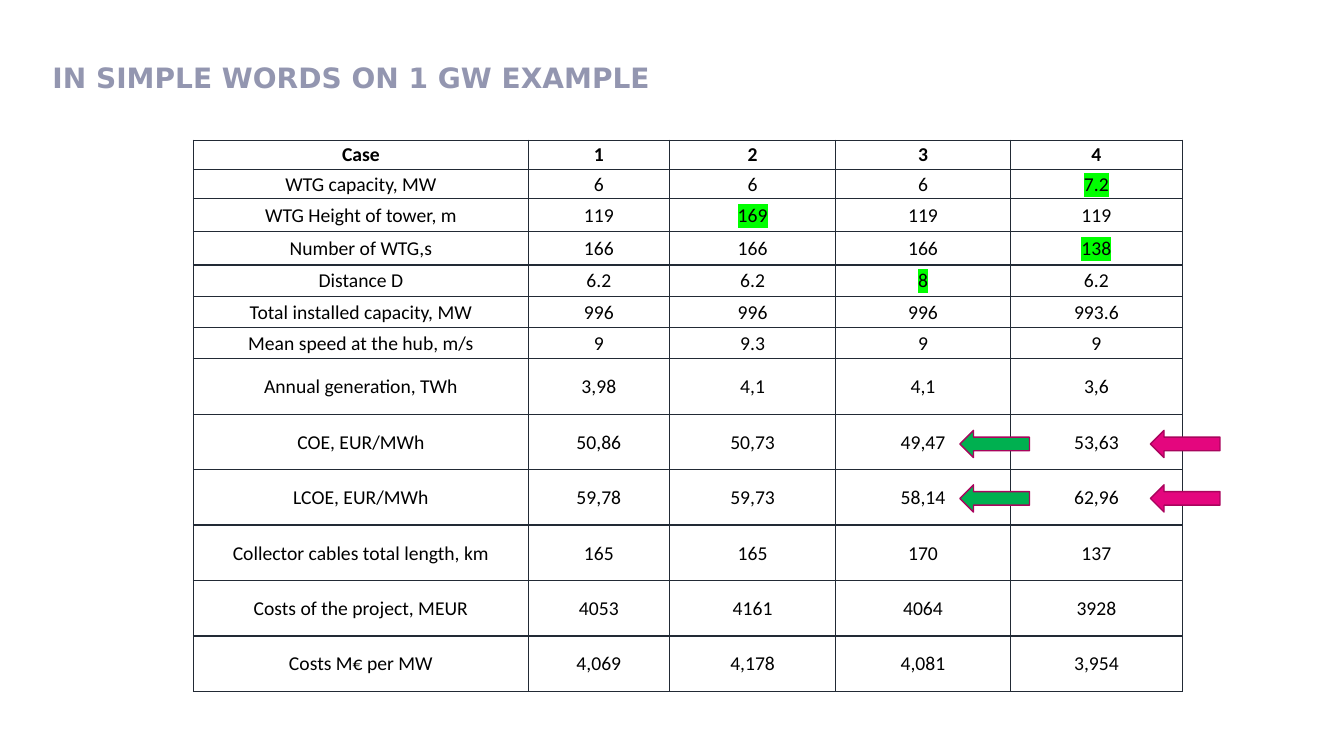
from lxml.etree import SubElement
from pptx import Presentation
from pptx.dml.color import RGBColor as Rgb
from pptx.enum.shapes import MSO_SHAPE as Shape
from pptx.enum.text import MSO_ANCHOR as Anchor, PP_ALIGN as Align
from pptx.oxml import parse_xml
from pptx.oxml.ns import nsdecls, qn
from pptx.util import Inches, Pt

HUES = {"title": "9396B0", "text": "000000", "grid": "222A35", "mark": "00FF00",
        "paper": "FFFFFF", "good": "00B050", "bad": "E4067E", "edge": "A9045D"}
COLS = [3.32, 1.4, 1.65, 1.73, 1.71]
ROWS = [0.29] * 2 + [0.33] * 2 + [0.31] * 3 + [0.55] * 6
DATA = [
    ["Case", "1", "2", "3", "4"],
    ["WTG capacity, MW", "6", "6", "6", "7.2"],
    ["WTG Height of tower, m", "119", "169", "119", "119"],
    ["Number of WTG,s", "166", "166", "166", "138"],
    ["Distance D", "6.2", "6.2", "8", "6.2"],
    ["Total installed capacity, MW", "996", "996", "996", "993.6"],
    ["Mean speed at the hub, m/s", "9", "9.3", "9", "9"],
    ["Annual generation, TWh", "3,98", "4,1", "4,1", "3,6"],
    ["COE, EUR/MWh", "50,86", "50,73", "49,47", "53,63"],
    ["LCOE, EUR/MWh", "59,78", "59,73", "58,14", "62,96"],
    ["Collector cables total length, km", "165", "165", "170", "137"],
    ["Costs of the project, MEUR", "4053", "4161", "4064", "3928"],
    ["Costs M€ per MW", "4,069", "4,178", "4,081", "3,954"],
]
MARKS = {(1, 4), (2, 2), (3, 4), (4, 3)}


def write(frame, text, size=14, face="Calibri", hue="text", bold=False,
          align=Align.LEFT, mark=None):
    """Put one formatted line of text in a frame."""
    para = frame.paragraphs[0]
    para.alignment = align
    run = para.add_run()
    run.text = text
    if mark:
        glow = SubElement(run.font._element, qn("a:highlight"))
        SubElement(glow, qn("a:srgbClr")).set("val", HUES[mark])
    run.font.size = Pt(size)
    run.font.bold = bold
    run.font.color.rgb = Rgb.from_string(HUES[hue])
    run.font.name = face


def rule(cell):
    """Draw the four borders of a cell."""
    props = cell._tc.get_or_add_tcPr()
    for spot, side in enumerate("LRTB"):
        props.insert(spot, parse_xml(
            f'<a:ln{side} {nsdecls("a")} w="{Pt(1)}"><a:solidFill>'
            f'<a:srgbClr val="{HUES["grid"]}"/></a:solidFill></a:ln{side}>'))


def add_title(slide, left, top, width, height):
    """Place the slide title."""
    frame = slide.shapes.add_textbox(
        Inches(left), Inches(top), Inches(width), Inches(height)).text_frame
    frame.word_wrap = True
    frame.margin_left = frame.margin_right = 0
    frame.margin_top = frame.margin_bottom = 0
    write(frame, "IN SIMPLE WORDS ON 1 GW EXAMPLE", size=20,
          face="DejaVu Sans", hue="title", bold=True)


def add_cases(slide, left, top):
    """Place the table that compares the four cases."""
    table = slide.shapes.add_table(
        len(ROWS), len(COLS), Inches(left), Inches(top),
        Inches(sum(COLS)), Inches(sum(ROWS))).table
    table.horz_banding = False
    for col, width in zip(table.columns, COLS):
        col.width = Inches(width)
    for row, height in zip(table.rows, ROWS):
        row.height = Inches(height)
    for r, line in enumerate(DATA):
        for c, text in enumerate(line):
            cell = table.cell(r, c)
            cell.vertical_anchor = Anchor.MIDDLE
            cell.margin_left = cell.margin_right = cell.margin_top = Inches(0.01)
            cell.margin_bottom = 0
            cell.fill.solid()
            cell.fill.fore_color.rgb = Rgb.from_string(HUES["paper"])
            rule(cell)
            write(cell.text_frame, text, bold=r == 0, align=Align.CENTER,
                  mark="mark" if (r, c) in MARKS else None)


def add_arrows(slide, left, top, hue, step=0.54):
    """Place a pair of arrows at the COE and LCOE rows."""
    for k in range(2):
        arrow = slide.shapes.add_shape(
            Shape.LEFT_ARROW, Inches(left), Inches(top + k * step),
            Inches(0.69), Inches(0.27))
        arrow.shadow.inherit = False
        arrow.fill.solid()
        arrow.fill.fore_color.rgb = Rgb.from_string(HUES[hue])
        arrow.line.color.rgb = Rgb.from_string(HUES["edge"])
        arrow.line.width = Pt(1)


def main():
    """Build and save the slide."""
    deck = Presentation()
    deck.slide_width, deck.slide_height = Inches(13.33), Inches(7.5)
    slide = deck.slides.add_slide(deck.slide_layouts[6])
    add_title(slide, 0.52, 0.6, 10.66, 0.63)
    add_cases(slide, 1.92, 1.39)
    add_arrows(slide, 11.41, 4.27, "bad")
    add_arrows(slide, 9.52, 4.27, "good")
    deck.save("out.pptx")


if __name__ == "__main__":
    main()
